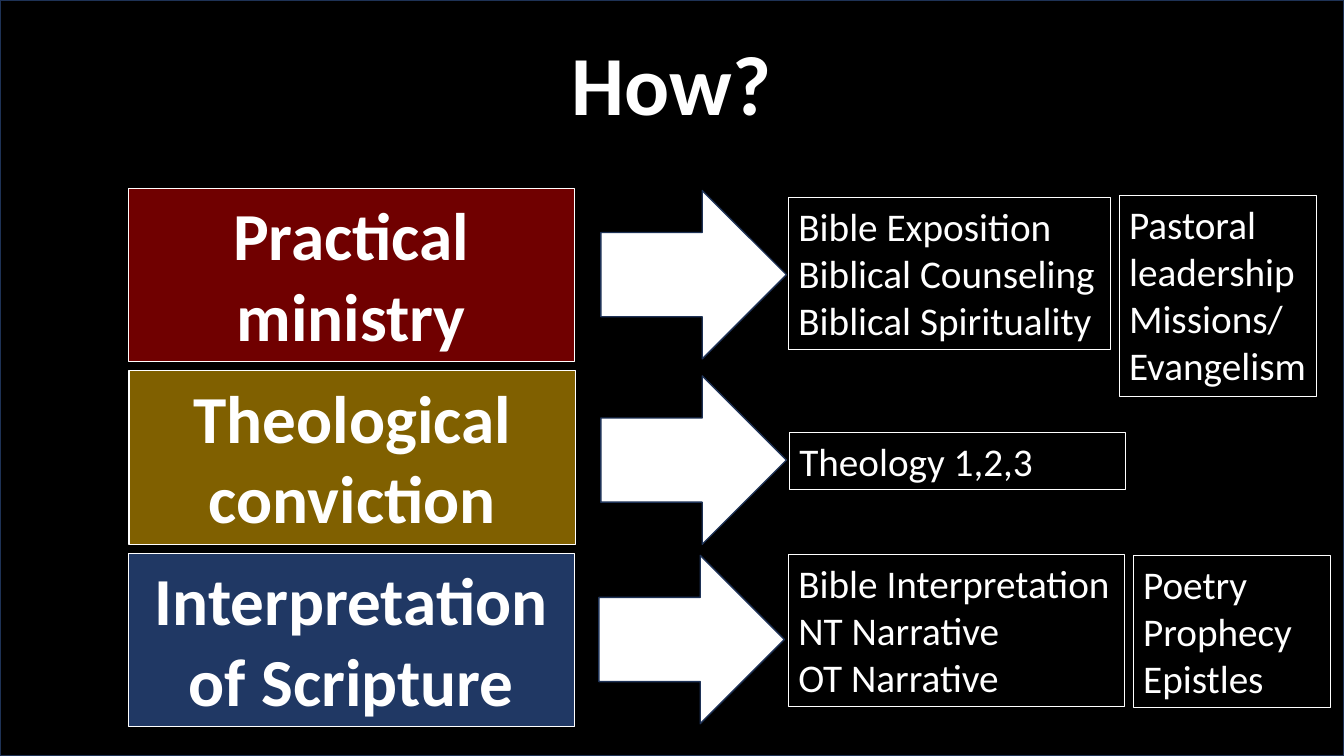
from pptx import Presentation
from pptx.dml.color import RGBColor
from pptx.enum import shapes, text
from pptx.util import Inches, Pt

COLORS = {
    "background": "000000",
    "white": "FFFFFF",
    "edge": "1E3256",
    "ministry": "700000",
    "conviction": "806000",
    "scripture": "203864",
}
TITLE = "How?"
STAGES = [
    {
        "name": "Practical ministry", "color": "ministry",
        "at": (1.27, 1.87), "arrow": (5.96, 1.89),
        "courses": [
            ((7.82, 1.96, 3.19, 1.51),
             ["Bible Exposition", "Biblical Counseling", "Biblical Spirituality"]),
            ((11.1, 1.94, 1.96, 1.99),
             ["Pastoral leadership", "Missions/", "Evangelism"]),
        ],
    },
    {
        "name": "Theological conviction", "color": "conviction",
        "at": (1.28, 3.68), "arrow": (5.96, 3.73),
        "courses": [((7.83, 4.29, 3.33, 0.57), ["Theology 1,2,3"])],
    },
    {
        "name": "Interpretation of Scripture", "color": "scripture",
        "at": (1.27, 5.49), "arrow": (5.94, 5.51),
        "courses": [
            ((7.82, 5.5, 3.33, 1.51),
             ["Bible Interpretation", "NT Narrative", "OT Narrative"]),
            ((11.24, 5.51, 1.96, 1.51), ["Poetry", "Prophecy", "Epistles"]),
        ],
    },
]
SLIDE_SIZE = (13.33, 7.5)
STAGE_SIZE = (4.43, 1.72)
ARROW_SIZE = (1.84, 1.67)


def rgb(name):
    return RGBColor.from_string(COLORS[name])


def add_block(slide, preset, box, fill, edge, edge_width):
    block = slide.shapes.add_shape(preset, *map(Inches, box))
    block.shadow.inherit = False
    if fill:
        block.fill.solid()
        block.fill.fore_color.rgb = rgb(fill)
    else:
        block.fill.background()
    block.line.color.rgb = rgb(edge)
    block.line.width = Pt(edge_width)
    return block


def write(block, lines, size, bold, align):
    frame = block.text_frame
    frame.text = "\n".join(lines)
    frame.word_wrap = True
    frame.auto_size = text.MSO_AUTO_SIZE.SHAPE_TO_FIT_TEXT
    frame.vertical_anchor = text.MSO_ANCHOR.TOP
    for line in frame.paragraphs:
        line.alignment = align
        line.font.name = "Calibri"
        line.font.size = Pt(size)
        line.font.bold = bold
        line.font.color.rgb = rgb("white")


def main():
    deck = Presentation()
    deck.slide_width, deck.slide_height = map(Inches, SLIDE_SIZE)
    slide = deck.slides.add_slide(deck.slide_layouts[6])
    rect = shapes.MSO_SHAPE.RECTANGLE
    center, left = text.PP_ALIGN.CENTER, text.PP_ALIGN.LEFT

    add_block(slide, rect, (0, 0, *SLIDE_SIZE), "background", "edge", 1)
    title = slide.shapes.add_textbox(*map(Inches, (5.14, 0.26, 3.04, 1.11)))
    write(title, [TITLE], 60, True, center)

    for stage in STAGES:
        name = add_block(slide, rect, stage["at"] + STAGE_SIZE, stage["color"], "white", 0.75)
        write(name, [stage["name"]], 48, True, center)
        add_block(slide, shapes.MSO_SHAPE.RIGHT_ARROW, stage["arrow"] + ARROW_SIZE,
                  "white", "edge", 1)
        for box, lines in stage["courses"]:
            courses = add_block(slide, rect, box, None, "white", 0.75)
            write(courses, lines, 28, False, left)

    deck.save("out.pptx")


if __name__ == "__main__":
    main()
